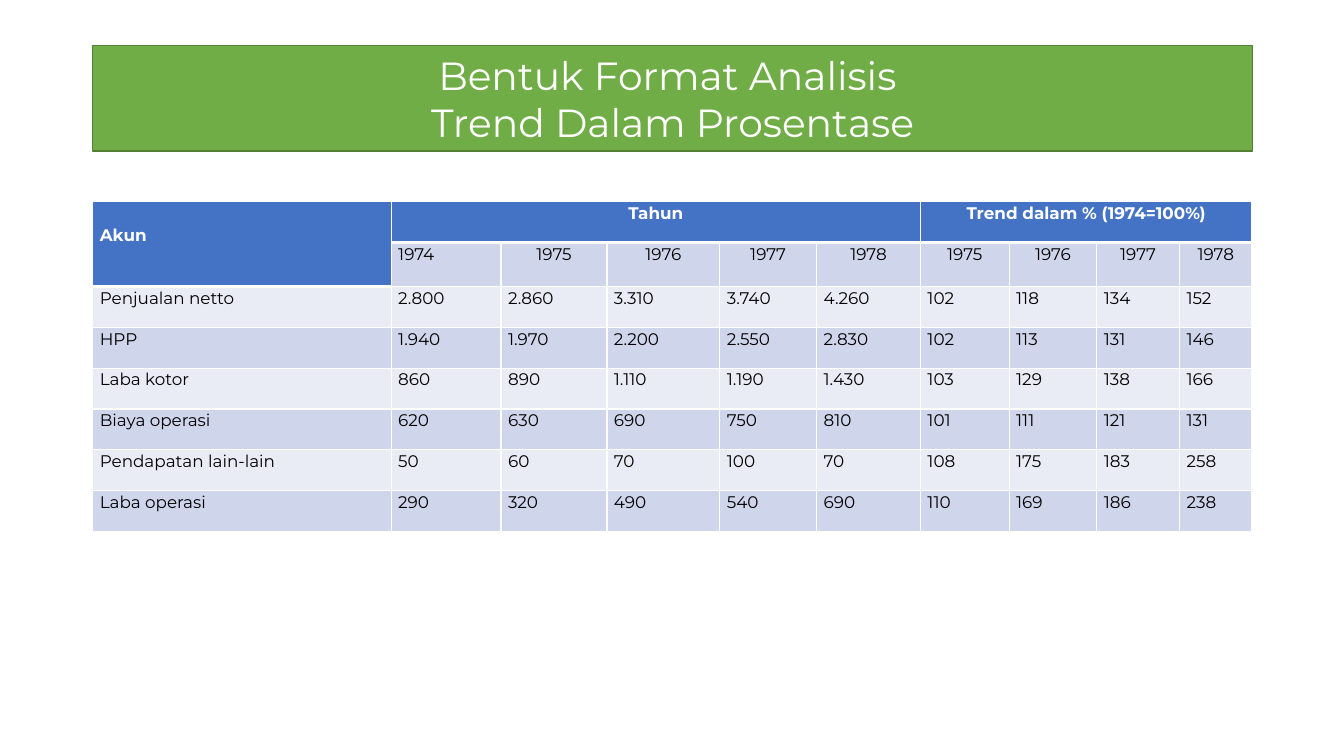
from dataclasses import dataclass

from lxml import etree
from pptx import Presentation
from pptx.dml.color import RGBColor
from pptx.enum.text import MSO_ANCHOR, MSO_AUTO_SIZE, PP_ALIGN
from pptx.oxml.ns import qn
from pptx.slide import Slide
from pptx.table import Table, _Cell
from pptx.text.text import TextFrame
from pptx.util import Inches, Pt

LEFT = PP_ALIGN.LEFT
CENTER = PP_ALIGN.CENTER
TOP = MSO_ANCHOR.TOP
MIDDLE = MSO_ANCHOR.MIDDLE
NO_AUTOFIT = MSO_AUTO_SIZE.NONE


@dataclass(frozen=True)
class Theme:
    font: str = "Montserrat"
    title_size: int = 28
    table_size: int = 12
    white: str = "FFFFFF"
    black: str = "000000"
    banner: str = "70AD47"
    banner_line: str = "538035"
    header: str = "4472C4"
    dark_band: str = "CFD5EA"
    light_band: str = "E9EBF5"
    rule: int = 1
    header_rule: int = 3


@dataclass(frozen=True)
class HeaderGroup:
    label: str
    column: int
    row_span: int = 1
    column_span: int = 1
    align: PP_ALIGN = CENTER
    margin_top: float = 0


@dataclass(frozen=True)
class Account:
    name: str
    amounts: tuple[str, ...]
    trends: tuple[str, ...]


THEME = Theme()
MARGIN_LEFT = 0.92
TABLE_TOP, TABLE_HEIGHT = 2, 3.24
HEADER_ROWS = 2
CELL_MARGIN = 0.07
COLUMN_WIDTHS = (2.96, 1.09, 1.05, 1.12, 0.96, 1.03, 0.88, 0.87, 0.82, 0.72)
CONTENT_WIDTH = sum(COLUMN_WIDTHS)

YEARS = ("1974", "1975", "1976", "1977", "1978")
HEADER_GROUPS = (
    HeaderGroup("Akun", 0, row_span=HEADER_ROWS, align=LEFT, margin_top=0.22),
    HeaderGroup("Tahun", 1, column_span=5),
    HeaderGroup("Trend dalam % (1974=100%)", 6, column_span=4),
)
ACCOUNTS = (
    Account("Penjualan netto", ("2.800", "2.860", "3.310", "3.740", "4.260"),
            ("102", "118", "134", "152")),
    Account("HPP", ("1.940", "1.970", "2.200", "2.550", "2.830"),
            ("102", "113", "131", "146")),
    Account("Laba kotor", ("860", "890", "1.110", "1.190", "1.430"),
            ("103", "129", "138", "166")),
    Account("Biaya operasi", ("620", "630", "690", "750", "810"),
            ("101", "111", "121", "131")),
    Account("Pendapatan lain-lain", ("50", "60", "70", "100", "70"),
            ("108", "175", "183", "258")),
    Account("Laba operasi", ("290", "320", "490", "540", "690"),
            ("110", "169", "186", "238")),
)


def write_text(frame: TextFrame, text: str, *, size: int, color: str,
               bold: bool = False, align: PP_ALIGN = LEFT,
               line_spacing: float = 1.0) -> None:
    """Fill the frame with one paragraph per line of text."""
    frame.text = text
    for paragraph in frame.paragraphs:
        paragraph.alignment = align
        paragraph.line_spacing = line_spacing
        for run in paragraph.runs:
            run.font.name = THEME.font
            run.font.size = Pt(size)
            run.font.bold = bold
            run.font.color.rgb = RGBColor.from_string(color)


def draw_title(slide: Slide) -> None:
    banner = slide.shapes.title
    banner.left, banner.top = Inches(MARGIN_LEFT), Inches(0.45)
    banner.width, banner.height = Inches(CONTENT_WIDTH), Inches(1.05)
    outline = etree.SubElement(banner._element.spPr, qn("a:prstGeom"),
                               prst="flowChartTerminator")
    etree.SubElement(outline, qn("a:avLst"))
    banner.fill.solid()
    banner.fill.fore_color.rgb = RGBColor.from_string(THEME.banner)
    banner.line.color.rgb = RGBColor.from_string(THEME.banner_line)
    banner.line.width = Pt(THEME.rule)
    frame = banner.text_frame
    frame.auto_size = NO_AUTOFIT
    frame.word_wrap = True
    frame.vertical_anchor = MIDDLE
    write_text(frame, "Bentuk Format Analisis \nTrend Dalam Prosentase",
               size=THEME.title_size, color=THEME.white, align=CENTER)


def set_borders(cell: _Cell, top: int, bottom: int) -> None:
    """Put white rules on the four sides, ahead of the cell's fill."""
    properties = cell._tc.get_or_add_tcPr()
    sides = {"L": THEME.rule, "R": THEME.rule, "T": top, "B": bottom}
    for position, (side, width) in enumerate(sides.items()):
        border = etree.Element(qn(f"a:ln{side}"), w=str(Pt(width)))
        fill = etree.SubElement(border, qn("a:solidFill"))
        etree.SubElement(fill, qn("a:srgbClr"), val=THEME.white)
        properties.insert(position, border)


def format_cell(cell: _Cell, row: int, column: int) -> None:
    is_header = row == 0 or (row < HEADER_ROWS and column == 0)
    band = THEME.dark_band if row % 2 else THEME.light_band
    cell.fill.solid()
    cell.fill.fore_color.rgb = RGBColor.from_string(THEME.header if is_header else band)
    cell.margin_left = cell.margin_right = Inches(CELL_MARGIN)
    cell.margin_top = cell.margin_bottom = 0
    cell.vertical_anchor = TOP
    header_end = HEADER_ROWS if column == 0 else 1
    top, bottom = (THEME.header_rule if edge == header_end else THEME.rule
                   for edge in (row, row + 1))
    set_borders(cell, top, bottom)


def write_cell(cell: _Cell, text: str, *, color: str = THEME.black,
               bold: bool = False, align: PP_ALIGN = LEFT) -> None:
    write_text(cell.text_frame, text, size=THEME.table_size, color=color,
               bold=bold, align=align, line_spacing=1.07)


def write_header(table: Table) -> None:
    for group in HEADER_GROUPS:
        cell = table.cell(0, group.column)
        cell.merge(table.cell(group.row_span - 1, group.column + group.column_span - 1))
        cell.margin_top = Inches(group.margin_top)
        write_cell(cell, group.label, color=THEME.white, bold=True, align=group.align)
    for column, year in enumerate(YEARS + YEARS[1:], start=1):
        write_cell(table.cell(1, column), year, align=LEFT if column == 1 else CENTER)


def draw_trend_table(slide: Slide) -> None:
    row_count = HEADER_ROWS + len(ACCOUNTS)
    table = slide.shapes.add_table(
        row_count, len(COLUMN_WIDTHS), Inches(MARGIN_LEFT), Inches(TABLE_TOP),
        Inches(CONTENT_WIDTH), Inches(TABLE_HEIGHT)).table
    table.first_row = table.horz_banding = False
    for column, width in zip(table.columns, COLUMN_WIDTHS):
        column.width = Inches(width)
    for row in range(row_count):
        table.rows[row].height = Inches(TABLE_HEIGHT / row_count)
        for column in range(len(COLUMN_WIDTHS)):
            format_cell(table.cell(row, column), row, column)
    write_header(table)
    for row, account in enumerate(ACCOUNTS, start=HEADER_ROWS):
        for column, value in enumerate((account.name, *account.amounts, *account.trends)):
            write_cell(table.cell(row, column), value)


def main() -> None:
    presentation = Presentation()
    presentation.slide_width, presentation.slide_height = Inches(13.33), Inches(7.5)
    title_only = presentation.slide_layouts[5]
    slide = presentation.slides.add_slide(title_only)
    draw_title(slide)
    draw_trend_table(slide)
    presentation.save("out.pptx")


if __name__ == "__main__":
    main()
